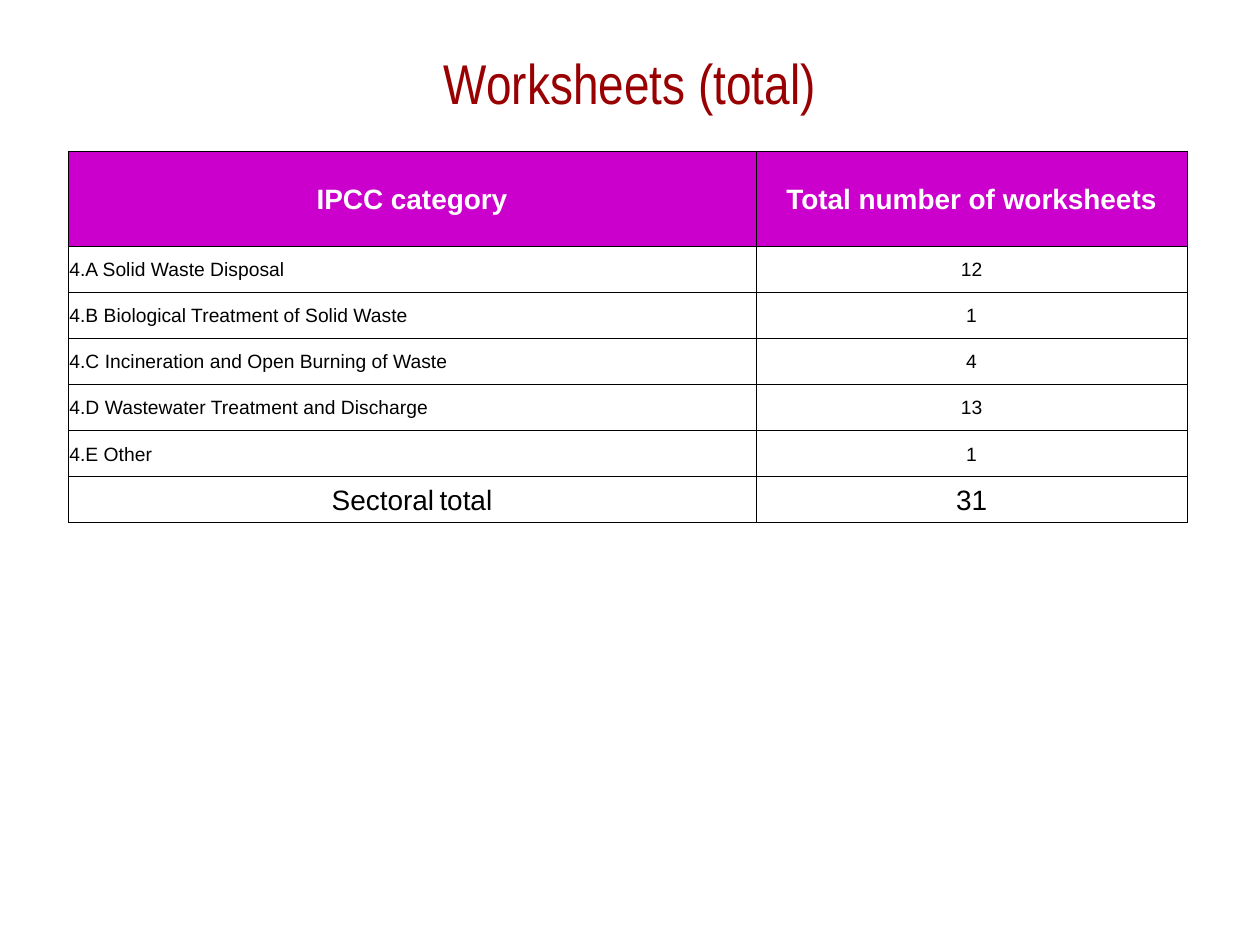
from dataclasses import dataclass
from typing import Optional

from lxml import etree
from pptx import Presentation
from pptx.dml.color import RGBColor
from pptx.enum.text import MSO_ANCHOR, PP_ALIGN
from pptx.oxml.ns import qn
from pptx.util import Cm, Pt

LEFT, CENTER = PP_ALIGN.LEFT, PP_ALIGN.CENTER
MIDDLE = MSO_ANCHOR.MIDDLE

DARK_RED = RGBColor(0x99, 0x00, 0x02)
MAGENTA = RGBColor(0xCC, 0x00, 0xCC)
WHITE = RGBColor(0xFF, 0xFF, 0xFF)
BLACK = RGBColor(0x00, 0x00, 0x00)

COLUMN_WIDTHS = (Cm(13.87), Cm(8.69))
HEADER_HEIGHT, ROW_HEIGHT = Cm(1.91), Cm(0.93)
CELL_INSET = Cm(0.03)
BORDER_WIDTH = Pt(0.5)

HEADERS = ("IPCC category", "Total number of worksheets")
CATEGORIES = (
    ("4.A Solid Waste Disposal", 12),
    ("4.B Biological Treatment of Solid Waste", 1),
    ("4.C Incineration and Open Burning of Waste", 4),
    ("4.D Wastewater Treatment and Discharge", 13),
    ("4.E Other", 1),
)


@dataclass(frozen=True)
class TextRun:
    text: str
    size: int
    color: RGBColor = BLACK
    font: str = "Arial"
    bold: bool = False


@dataclass(frozen=True)
class CellContent:
    runs: tuple[TextRun, ...]
    alignment: PP_ALIGN = CENTER
    fill: Optional[RGBColor] = None


def write_runs(paragraph, runs: tuple[TextRun, ...], alignment: PP_ALIGN) -> None:
    paragraph.alignment = alignment
    for item in runs:
        run = paragraph.add_run()
        run.text = item.text
        run.font.name = item.font
        run.font.size = Pt(item.size)
        run.font.bold = item.bold
        run.font.color.rgb = item.color


def add_borders(cell) -> None:
    properties = cell._tc.get_or_add_tcPr()
    for side in ("a:lnL", "a:lnR", "a:lnT", "a:lnB"):
        line = etree.SubElement(properties, qn(side), w=str(BORDER_WIDTH))
        fill = etree.SubElement(line, qn("a:solidFill"))
        etree.SubElement(fill, qn("a:srgbClr"), val=str(BLACK))


def fill_cell(cell, content: CellContent) -> None:
    add_borders(cell)
    if content.fill is None:
        cell.fill.background()
    else:
        cell.fill.solid()
        cell.fill.fore_color.rgb = content.fill
    cell.margin_left = cell.margin_top = cell.margin_right = CELL_INSET
    cell.margin_bottom = 0
    cell.vertical_anchor = MIDDLE
    write_runs(cell.text_frame.paragraphs[0], content.runs, content.alignment)


def worksheet_rows() -> list[tuple[CellContent, ...]]:
    """Return the header, one row per category and the sectoral total."""
    header = tuple(
        CellContent((TextRun(text, 16, WHITE, bold=True),), fill=MAGENTA)
        for text in HEADERS
    )
    body = [
        (CellContent((TextRun(name, 11),), LEFT), CellContent((TextRun(str(count), 11),)))
        for name, count in CATEGORIES
    ]
    total = sum(count for _, count in CATEGORIES)
    total_label = (TextRun("Sectoral", 16), TextRun(" ", 11), TextRun("total", 16))
    footer = (CellContent(total_label), CellContent((TextRun(str(total), 16),)))
    return [header, *body, footer]


def add_title(slide) -> None:
    title = slide.shapes.add_textbox(Cm(0.74), Cm(0.89), Cm(23.92), Cm(1.55))
    frame = title.text_frame
    frame.word_wrap = True
    frame.vertical_anchor = MIDDLE
    run = TextRun("Worksheets (total)", 32, DARK_RED, "Arial Narrow")
    write_runs(frame.paragraphs[0], (run,), CENTER)


def add_worksheet_table(slide) -> None:
    rows = worksheet_rows()
    height = HEADER_HEIGHT + ROW_HEIGHT * (len(rows) - 1)
    table = slide.shapes.add_table(
        len(rows), len(COLUMN_WIDTHS), Cm(1.37), Cm(3.05), sum(COLUMN_WIDTHS), height
    ).table
    table.horz_banding = False
    for column, width in zip(table.columns, COLUMN_WIDTHS):
        column.width = width
    for index, (row, contents) in enumerate(zip(table.rows, rows)):
        row.height = ROW_HEIGHT if index else HEADER_HEIGHT
        for cell, content in zip(row.cells, contents):
            fill_cell(cell, content)


def main() -> None:
    presentation = Presentation()
    presentation.slide_width, presentation.slide_height = Cm(25.4), Cm(19.05)
    slide = presentation.slides.add_slide(presentation.slide_layouts[6])
    add_title(slide)
    add_worksheet_table(slide)
    presentation.save("out.pptx")


if __name__ == "__main__":
    main()
